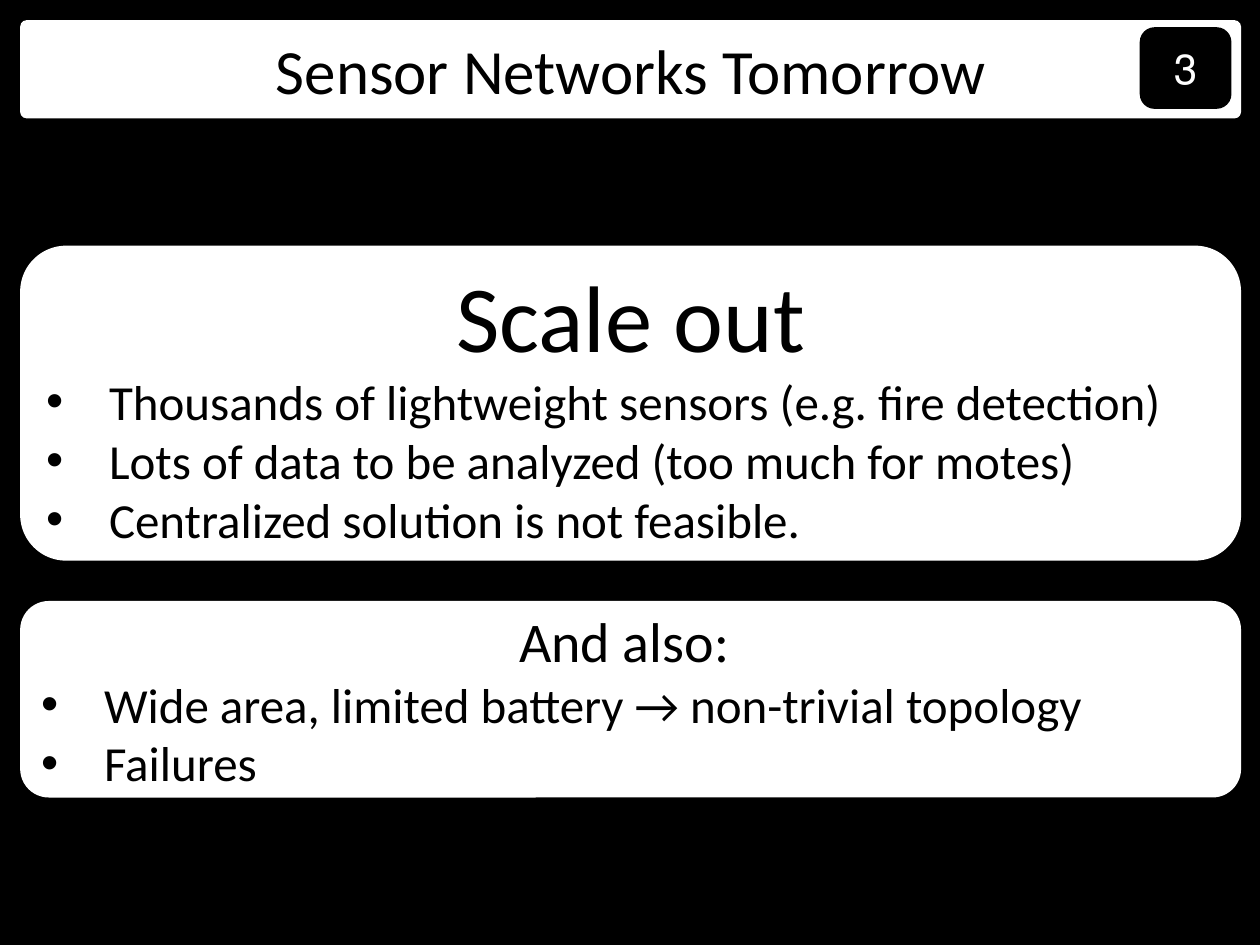
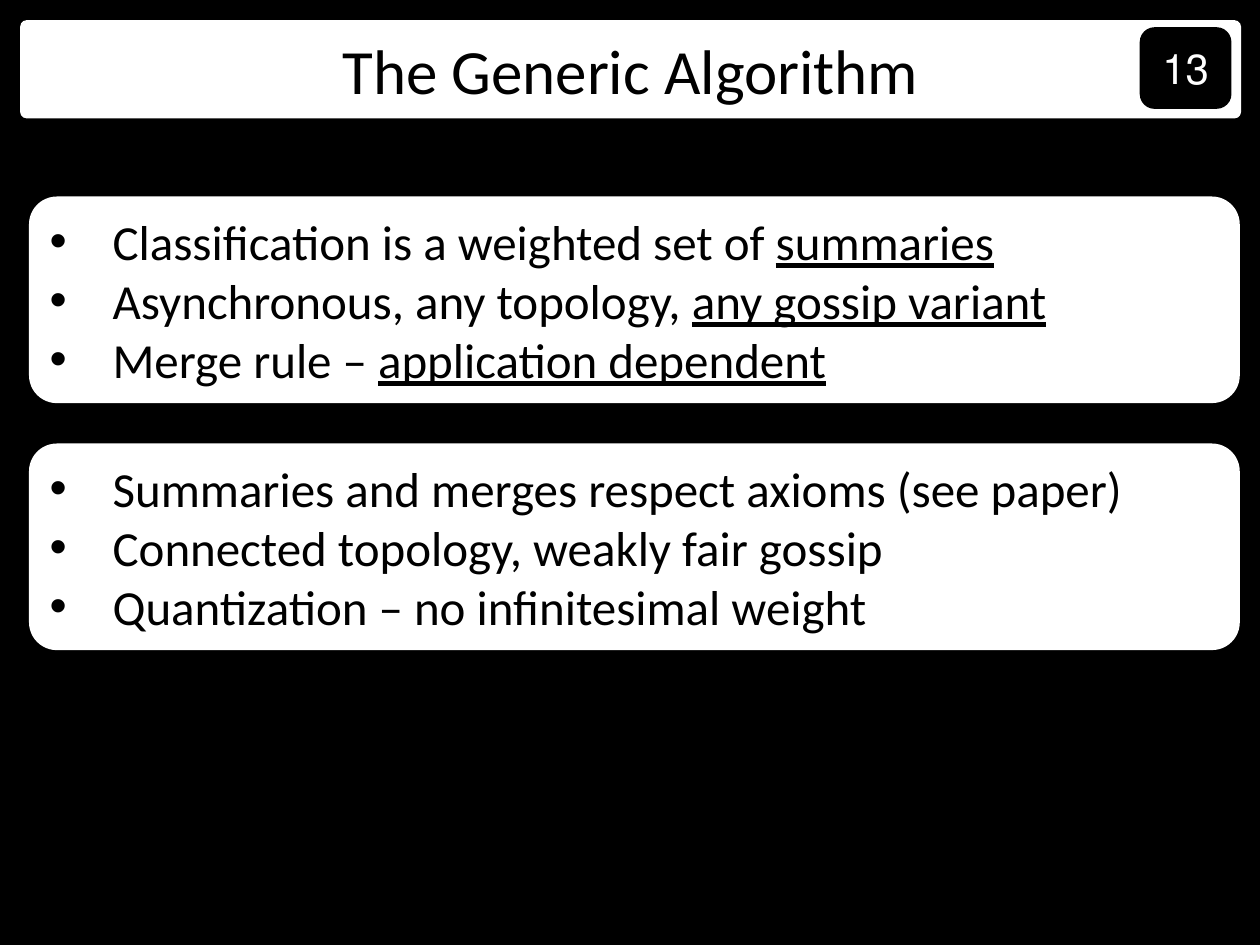
from dataclasses import dataclass
from typing import NamedTuple

from pptx import Presentation
from pptx.dml.color import RGBColor
from pptx.enum import shapes, text
from pptx.oxml.ns import qn
from pptx.util import Inches, Pt
from lxml import etree

BLACK = RGBColor(0x00, 0x00, 0x00)
WHITE = RGBColor(0xFF, 0xFF, 0xFF)
FONT = "Calibri"
TWO_CONTENT_LAYOUT = 3
BULLET_INDENT = Inches(0.5)
BULLET_SIZE = 28
# Share of the corner radius that a rounded rectangle keeps free of text
CORNER_INSET = 0.29


class Box(NamedTuple):
    left: float
    top: float
    width: float
    height: float
    corner: float


class Heading(NamedTuple):
    words: str
    size: int


class Bullet(NamedTuple):
    plain: str
    underlined: str = ""


@dataclass
class Panel:
    box: Box
    bullets: list[Bullet]
    heading: Heading | None = None


@dataclass
class Page:
    title: str
    number: int
    panels: list[Panel]


TITLE_BOX = Box(0.16, 0.16, 9.69, 0.78, 0.068)
NUMBER_BOX = Box(9.06, 0.23, 0.7, 0.62, 0.167)
ALGORITHM_BOX = Box(0.23, 1.56, 9.61, 1.64, 0.135)
AXIOMS_BOX = ALGORITHM_BOX._replace(top=3.52)

PAGES = [
    Page("Sensor Networks Tomorrow", 3, [
        Panel(Box(0.16, 1.95, 9.69, 2.5, 0.146), [
            Bullet("Thousands of lightweight sensors (e.g. fire detection)"),
            Bullet("Lots of data to be analyzed (too much for motes)"),
            Bullet("Centralized solution is not feasible."),
        ], Heading("Scale out", 54)),
        Panel(Box(0.16, 4.77, 9.69, 1.56, 0.146), [
            Bullet("Wide area, limited battery → non-trivial topology"),
            Bullet("Failures"),
        ], Heading("And also: ", 32)),
    ]),
    Page("The Generic Algorithm", 13, [
        Panel(ALGORITHM_BOX, [
            Bullet("Classification is a weighted set of ", "summaries"),
            Bullet("Asynchronous, any topology, ", "any gossip variant"),
            Bullet("Merge rule – ", "application dependent"),
        ]),
        Panel(AXIOMS_BOX, [
            Bullet("Summaries and merges respect axioms (see paper)"),
            Bullet("Connected topology, weakly fair gossip"),
            Bullet("Quantization – no infinitesimal weight"),
        ]),
    ]),
]


def add_rounded_box(slide, box: Box, color: RGBColor):
    shape = slide.shapes.add_shape(
        shapes.MSO_SHAPE.ROUNDED_RECTANGLE, *map(Inches, box[:4]))
    shape.adjustments[0] = box.corner
    shape.shadow.inherit = False
    shape.fill.solid()
    shape.fill.fore_color.rgb = color
    shape.line.fill.background()
    return shape


def seat_placeholder(slide, placeholder, box: Box):
    """Put the placeholder on a white rounded box and return its text frame."""
    backing = add_rounded_box(slide, box, WHITE)
    placeholder._element.addprevious(backing._element)
    placeholder.left, placeholder.top = backing.left, backing.top
    placeholder.width, placeholder.height = backing.width, backing.height
    frame = placeholder.text_frame
    inset = box.corner * min(box.width, box.height) * CORNER_INSET
    frame.margin_left = frame.margin_right = Inches(0.1 + inset)
    frame.margin_top = frame.margin_bottom = Inches(0.05 + inset)
    frame.vertical_anchor = text.MSO_ANCHOR.MIDDLE
    frame.auto_size = text.MSO_AUTO_SIZE.NONE
    frame.word_wrap = True
    return frame


def style_paragraph(paragraph, size: int, color: RGBColor, centered: bool) -> None:
    paragraph.font.name = FONT
    paragraph.font.size = Pt(size)
    paragraph.font.color.rgb = color
    paragraph.space_before = Pt(0)
    paragraph.alignment = (
        text.PP_ALIGN.CENTER if centered else text.PP_ALIGN.LEFT)


def set_bullet(paragraph, character: str | None) -> None:
    """Set the hanging indent and the bullet; None means no bullet."""
    properties = paragraph._p.get_or_add_pPr()
    properties.set("marL", str(BULLET_INDENT))
    properties.set("indent", str(-BULLET_INDENT))
    tag = "a:buChar" if character else "a:buNone"
    bullet = etree.Element(qn(tag))
    if character:
        bullet.set("char", character)
    properties.find(qn("a:defRPr")).addprevious(bullet)


def add_title(slide, title: str) -> None:
    frame = seat_placeholder(slide, slide.shapes.title, TITLE_BOX)
    frame.text = title
    style_paragraph(frame.paragraphs[0], 36, BLACK, centered=True)


def add_number(slide, number: int) -> None:
    badge = add_rounded_box(slide, NUMBER_BOX, BLACK)
    badge.line.color.rgb = BLACK
    badge.line.width = Pt(2)
    frame = badge.text_frame
    frame.text = str(number)
    frame.vertical_anchor = text.MSO_ANCHOR.MIDDLE
    paragraph = frame.paragraphs[0]
    style_paragraph(paragraph, 24, WHITE, centered=True)
    paragraph._p.get_or_add_pPr().set("rtl", "1")


def fill_panel(slide, placeholder, panel: Panel) -> None:
    frame = seat_placeholder(slide, placeholder, panel.box)
    lines = ([panel.heading] if panel.heading else []) + panel.bullets
    for index, line in enumerate(lines):
        paragraph = frame.add_paragraph() if index else frame.paragraphs[0]
        if isinstance(line, Heading):
            paragraph.add_run().text = line.words
            style_paragraph(paragraph, line.size, BLACK, centered=True)
            set_bullet(paragraph, None)
            continue
        paragraph.add_run().text = line.plain
        if line.underlined:
            run = paragraph.add_run()
            run.text = line.underlined
            run.font.underline = True
        style_paragraph(paragraph, BULLET_SIZE, BLACK, centered=False)
        set_bullet(paragraph, "•")


def main() -> None:
    presentation = Presentation()
    presentation.slide_width, presentation.slide_height = Inches(10), Inches(7.5)
    background = presentation.slide_master.background.fill
    background.solid()
    background.fore_color.rgb = BLACK
    layout = presentation.slide_layouts[TWO_CONTENT_LAYOUT]
    for page in PAGES:
        slide = presentation.slides.add_slide(layout)
        add_title(slide, page.title)
        bodies = list(slide.placeholders)[1:]
        for placeholder, panel in zip(bodies, page.panels):
            fill_panel(slide, placeholder, panel)
        add_number(slide, page.number)
    presentation.save("out.pptx")


if __name__ == "__main__":
    main()
